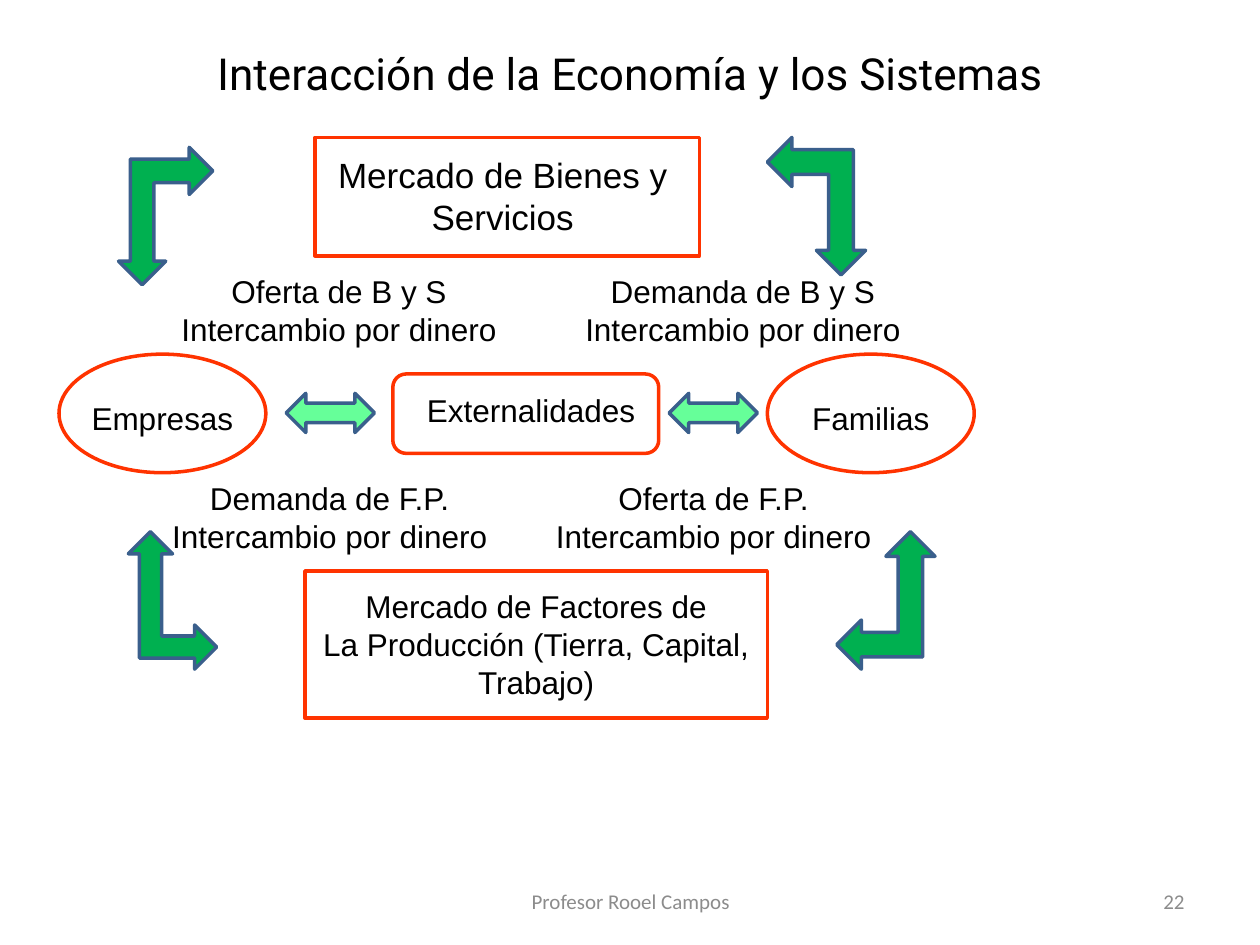
from dataclasses import dataclass

from pptx import Presentation
from pptx.dml.color import RGBColor
from pptx.enum.shapes import MSO_SHAPE as Shape
from pptx.enum.text import MSO_ANCHOR as Anchor, MSO_AUTO_SIZE as AutoSize, PP_ALIGN as Align
from pptx.util import Cm, Pt


@dataclass(frozen=True)
class Theme:
    ink: str = "000000"
    muted: str = "8C8C8C"
    frame: str = "FF3300"
    flow: str = "00B050"
    link: str = "66FF99"
    arrow_edge: str = "3A5F8C"
    title_font: str = "Roboto"
    body_font: str = "Arial"
    footer_font: str = "Calibri"
    title_size: float = 25.2
    market_size: float = 20
    body_size: float = 18
    footer_size: float = 12
    line_width: float = 2


@dataclass(frozen=True)
class Box:
    """A region in centimetres."""
    left: float
    top: float
    width: float
    height: float

    def lengths(self):
        return Cm(self.left), Cm(self.top), Cm(self.width), Cm(self.height)

    def inner(self, dx, dy, width, height):
        return Box(self.left + dx, self.top + dy, width, height)


THEME = Theme()
EXCHANGE = "Intercambio por dinero"


def write(frame, lines, size, font=THEME.body_font, color=THEME.ink, align=Align.CENTER):
    frame.text = "\n".join(lines)
    for paragraph in frame.paragraphs:
        paragraph.alignment = align
        paragraph.font.size = Pt(size)
        paragraph.font.name = font
        paragraph.font.color.rgb = RGBColor.from_string(color)


def add_label(slide, box, lines, size=THEME.body_size, wrap=False):
    frame = slide.shapes.add_textbox(*box.lengths()).text_frame
    frame.word_wrap = wrap
    write(frame, lines, size)


def add_outline(slide, kind, box, line=THEME.frame, fill=None):
    outline = slide.shapes.add_shape(kind, *box.lengths())
    outline.shadow.inherit = False
    if fill:
        outline.fill.solid()
        outline.fill.fore_color.rgb = RGBColor.from_string(fill)
    else:
        outline.fill.background()
    outline.line.color.rgb = RGBColor.from_string(line)
    outline.line.width = Pt(THEME.line_width)
    return outline


def add_title(slide, box, text):
    title = slide.shapes.title
    title.left, title.top, title.width, title.height = box.lengths()
    frame = title.text_frame
    frame.auto_size = AutoSize.NONE
    frame.vertical_anchor = Anchor.MIDDLE
    write(frame, [text], THEME.title_size, THEME.title_font)


def add_market(slide, box, lines, size, shift=0):
    """Framed market; shift moves its label sideways."""
    add_outline(slide, Shape.RECTANGLE, box)
    label = box.inner(shift, 0.2, box.width, box.height - 0.4)
    add_label(slide, label, lines, size, wrap=True)


def add_actor(slide, box, name):
    add_outline(slide, Shape.OVAL, box)
    add_label(slide, box.inner(0, 0.78, box.width, 1.02), [name])


def add_externalities(slide, box):
    """Rounded box with a double arrow on either side."""
    add_outline(slide, Shape.ROUNDED_RECTANGLE, box)
    add_label(slide, box.inner(0.41, 0.21, 4.75, 1.02), ["Externalidades"])
    for dx in (-2.15, box.width + 0.21):
        add_outline(slide, Shape.LEFT_RIGHT_ARROW, box.inner(dx, 0.39, 1.78, 0.79),
                    THEME.arrow_edge, THEME.link)


def add_corner_arrow(slide, box, upper, mirrored):
    arrow = add_outline(slide, Shape.LEFT_UP_ARROW, box, THEME.arrow_edge, THEME.flow)
    arrow.rotation = 180 if upper else 0
    if mirrored:
        arrow._element.spPr.xfrm.set("flipH", "1")


def add_footer(slide, box, text, align):
    frame = slide.shapes.add_textbox(*box.lengths()).text_frame
    frame.word_wrap = True
    frame.vertical_anchor = Anchor.MIDDLE
    write(frame, [text], THEME.footer_size, THEME.footer_font, THEME.muted, align)


def main():
    deck = Presentation()
    deck.slide_width, deck.slide_height = Cm(25.4), Cm(19.05)
    slide = deck.slides.add_slide(deck.slide_layouts[5])
    add_title(slide, Box(1.27, 0.76, 22.86, 1.42), "Interacción de la Economía y los Sistemas")

    # Markets above and below
    add_market(slide, Box(6.35, 2.77, 7.75, 2.39),
               ["Mercado de Bienes y", "Servicios"], THEME.market_size, shift=-0.09)
    add_market(slide, Box(6.15, 11.51, 9.32, 2.97),
               ["Mercado de Factores de", "La Producción (Tierra, Capital, Trabajo)"],
               THEME.body_size)

    # Corner arrows joining markets and actors
    for box, upper, mirrored in (
        (Box(2.39, 2.97, 1.9, 2.77), True, False),
        (Box(15.47, 2.77, 1.98, 2.77), True, True),
        (Box(2.59, 10.72, 1.78, 2.77), False, True),
        (Box(16.87, 10.72, 1.98, 2.77), False, False),
    ):
        add_corner_arrow(slide, box, upper, mirrored)

    # Actors and externalities in the middle row
    for left, name in ((1.19, "Empresas"), (15.47, "Familias")):
        add_actor(slide, Box(left, 7.14, 4.17, 2.39), name)
    add_externalities(slide, Box(7.92, 7.54, 5.36, 1.6))

    # Exchanges between actors and markets
    for left, top, flow in (
        (3.37, 5.36, "Oferta de B y S"),
        (11.51, 5.36, "Demanda de B y S"),
        (3.18, 9.53, "Demanda de F.P."),
        (10.92, 9.53, "Oferta de F.P."),
    ):
        add_label(slide, Box(left, top, 6.93, 1.8), [flow, EXCHANGE])

    # Footer
    add_footer(slide, Box(8.69, 17.65, 8.05, 1.02), "Profesor Rooel Campos", Align.CENTER)
    add_footer(slide, Box(18.21, 17.65, 5.92, 1.02), "22", Align.RIGHT)
    deck.save("out.pptx")


if __name__ == "__main__":
    main()
